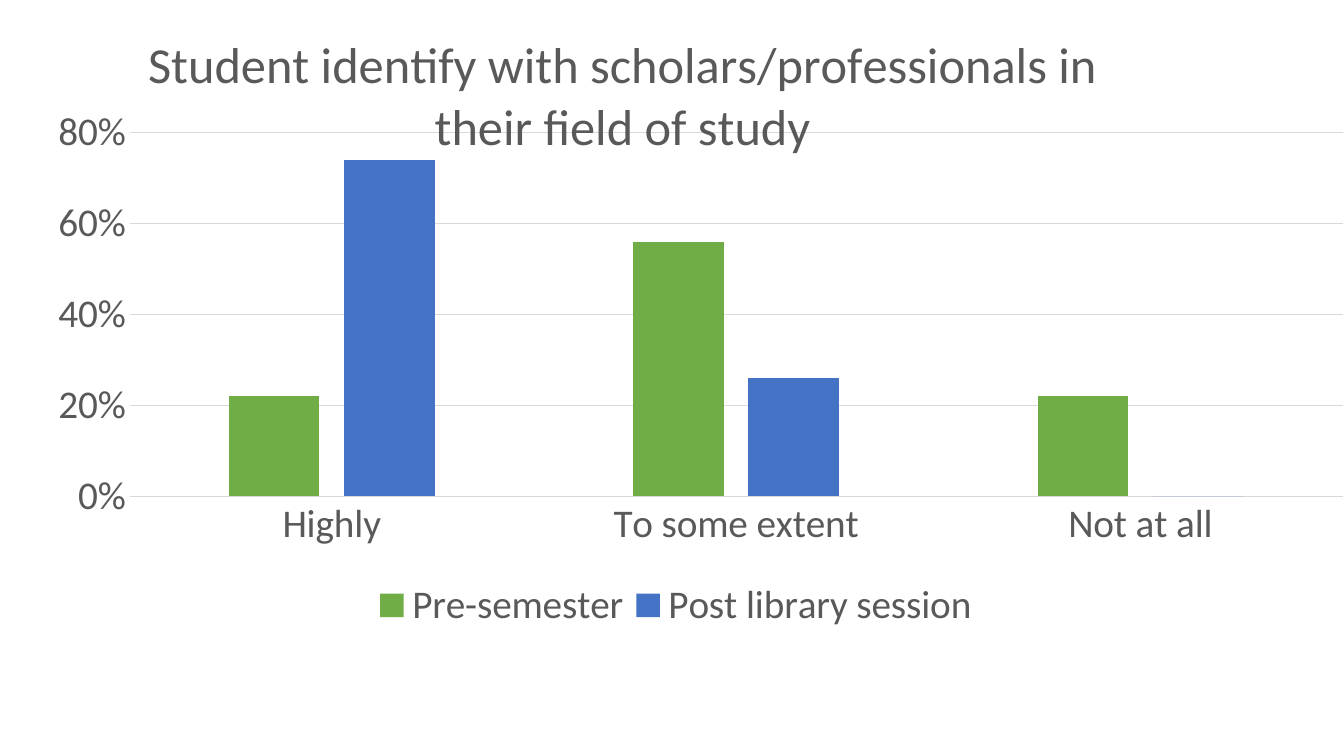
from dataclasses import dataclass
from typing import Any, Optional

from pptx import Presentation
from pptx.chart.data import CategoryChartData
from pptx.dml.color import RGBColor
from pptx.enum.chart import XL_CHART_TYPE, XL_LEGEND_POSITION, XL_TICK_MARK
from pptx.oxml import parse_xml
from pptx.oxml.ns import nsdecls, qn
from pptx.util import Inches, Pt

COLUMNS = XL_CHART_TYPE.COLUMN_CLUSTERED
BOTTOM = XL_LEGEND_POSITION.BOTTOM
NO_TICK = XL_TICK_MARK.NONE
TEXT, GRID = "595959", "D9D9D9"
TITLE = "Student identify with scholars/professionals in their field of study"
CATEGORIES = ["Highly", "To some extent", "Not at all"]


@dataclass
class Series:
    name: str
    values: list[float]
    color: str


@dataclass
class Layout:
    x: float
    y: float
    w: Optional[float] = None
    h: Optional[float] = None
    inner: bool = False


SERIES = [
    Series("Pre-semester", [0.22, 0.56, 0.22], "70AD47"),
    Series("Post library session", [0.74, 0.26, 0], "4472C4"),
]


def rgb(color: str) -> RGBColor:
    return RGBColor.from_string(color)


def set_attrs(obj: Any, values: dict[str, Any]) -> None:
    for name, value in values.items():
        setattr(obj, name, value)


def set_font(font: Any, size: float) -> None:
    set_attrs(font, {"name": "Calibri", "size": Pt(size), "bold": False})
    font.color.rgb = rgb(TEXT)


def set_line(line: Any) -> None:
    line.color.rgb = rgb(GRID)
    line.width = Pt(0.75)


def place(parent: Any, layout: Layout, after: Optional[str] = None) -> None:
    for old in parent.findall(qn("c:layout")):
        parent.remove(old)
    target = '<c:layoutTarget val="inner"/>' if layout.inner else ""
    modes = '<c:xMode val="edge"/><c:yMode val="edge"/>'
    sizes = "".join(
        f'<c:{key} val="{value}"/>'
        for key, value in zip("xywh", (layout.x, layout.y, layout.w, layout.h))
        if value is not None
    )
    el = parse_xml(
        f'<c:layout {nsdecls("c")}><c:manualLayout>{target}{modes}{sizes}'
        "</c:manualLayout></c:layout>"
    )
    if after:
        parent.find(qn(after)).addnext(el)
    else:
        parent.insert(0, el)


def add_title(chart: Any) -> None:
    chart.has_title = True
    tf = chart.chart_title.text_frame
    tf.text = TITLE
    set_font(tf.paragraphs[0].runs[0].font, 36)
    place(chart.chart_title._element, Layout(0.09, 0.03), "c:tx")


def add_legend(chart: Any) -> None:
    chart.has_legend = True
    legend = chart.legend
    set_attrs(legend, {"position": BOTTOM, "include_in_layout": False})
    set_font(legend.font, 28)
    place(legend._element, Layout(0.26, 0.85, 0.46, 0.09), "c:legendPos")


def format_axes(chart: Any) -> None:
    value_axis, category_axis = chart.value_axis, chart.category_axis
    for axis in (value_axis, category_axis):
        set_attrs(axis, {"major_tick_mark": NO_TICK, "minor_tick_mark": NO_TICK})
        set_font(axis.tick_labels.font, 28)
    set_attrs(value_axis, {"minimum_scale": 0, "maximum_scale": 0.8,
                           "major_unit": 0.2, "has_major_gridlines": True})
    set_attrs(value_axis.tick_labels,
              {"number_format": "0%", "number_format_is_linked": False})
    value_axis.format.line.fill.background()
    set_line(value_axis.major_gridlines.format.line)
    set_line(category_axis.format.line)


def add_survey_chart(s: Any) -> None:
    data = CategoryChartData(number_format="0%")
    data.categories = CATEGORIES
    for series in SERIES:
        data.add_series(series.name, series.values)
    chart = s.shapes.add_chart(COLUMNS, Inches(0.18), Inches(0), Inches(13.31),
                               Inches(6.71), data).chart
    set_font(chart.font, 10)
    add_title(chart)
    add_legend(chart)
    format_axes(chart)
    plot = chart.plots[0]
    set_attrs(plot, {"gap_width": 219, "overlap": -27, "vary_by_categories": False})
    for bars, series in zip(plot.series, SERIES):
        bars.format.fill.solid()
        bars.format.fill.fore_color.rgb = rgb(series.color)
    plot_area = chart._chartSpace.chart.plotArea
    place(plot_area, Layout(0.083, 0.196, 0.904, 0.538, inner=True))


def main() -> None:
    prs = Presentation()
    set_attrs(prs, {"slide_width": Inches(13.33), "slide_height": Inches(7.5)})
    s = prs.slides.add_slide(prs.slide_layouts[6])
    add_survey_chart(s)
    prs.save("out.pptx")


if __name__ == "__main__":
    main()
